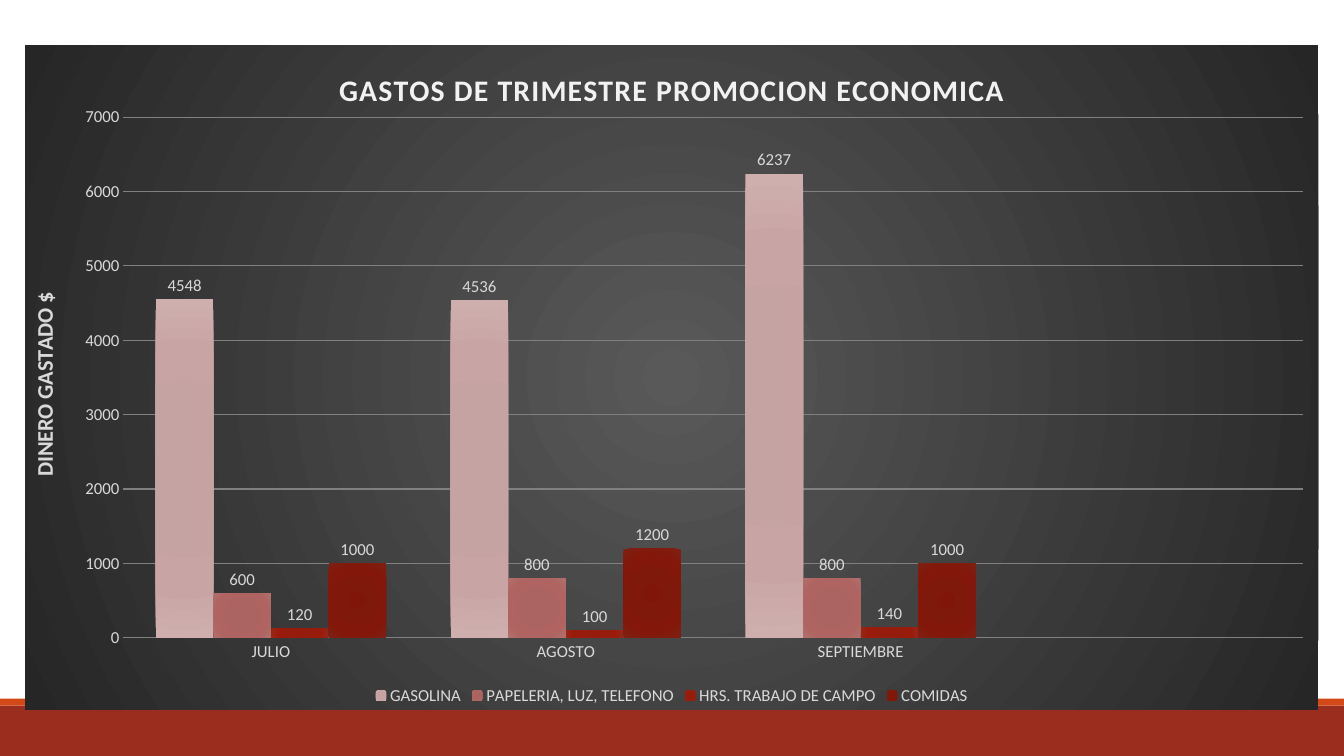
from dataclasses import dataclass

import pptx
import pptx.chart.data
import pptx.dml.color
import pptx.enum.chart
import pptx.enum.shapes
import pptx.oxml
import pptx.oxml.ns
import pptx.util

Pt = pptx.util.Pt


@dataclass(frozen=True)
class Theme:
    face: str = "Calibri"
    brick: str = "9B2D1F"
    orange: str = "D34817"
    grid: str = "808080"
    text: str = "D9D9D9"
    title: str = "F2F2F2"
    body: float = 12
    axis: float = 16
    head: float = 21.28
    panel: tuple = ((0, "595959"), (100, "262626"))


THEME = Theme()
MONTHS = ("JULIO", "AGOSTO", "SEPTIEMBRE", "")
STOPS = (0, 34, 70, 100)
COSTS = (
    ("GASOLINA", (4548, 4536, 6237, None),
     ("C3A1A0", "C4A3A2", "C8A5A4", "CEAFAE")),
    ("PAPELERIA, LUZ, TELEFONO", (600, 800, 800, None),
     ("AB625E", "AB6461", "AF6461", "B16F6C")),
    ("HRS. TRABAJO DE CAMPO", (120, 100, 140, None),
     ("971B0B", "961D0E", "9B1B0B", "972617")),
    ("COMIDAS", (1000, 1200, 1000, None),
     ("801609", "7F190C", "831709", "7F2014")),
)


def rgb(code):
    return pptx.dml.color.RGBColor.from_string(code)


def style(font, size, color=THEME.text, bold=False):
    font.name = THEME.face
    font.size = Pt(size)
    font.bold = bold
    font.color.rgb = rgb(color)


def band(slide, top, height, color):
    """Add a full-width strip."""
    shape = slide.shapes.add_shape(
        pptx.enum.shapes.MSO_SHAPE.RECTANGLE, 0, Pt(top), Pt(960), Pt(height))
    shape.shadow.inherit = False
    shape.fill.solid()
    shape.fill.fore_color.rgb = rgb(color)
    shape.line.fill.background()


def radial(stops, focus):
    """Return shape properties with a circular gradient around focus."""
    marks = "".join(
        f'<a:gs pos="{pos * 1000}"><a:srgbClr val="{color}"/></a:gs>'
        for pos, color in stops)
    rect = " ".join(f'{side}="{pct * 1000}"' for side, pct in zip("ltrb", focus))
    return pptx.oxml.parse_xml(
        f'<c:spPr {pptx.oxml.ns.nsdecls("c", "a")}><a:gradFill>'
        f'<a:gsLst>{marks}</a:gsLst><a:path path="circle">'
        f'<a:fillToRect {rect}/></a:path></a:gradFill>'
        '<a:ln><a:noFill/></a:ln></c:spPr>')


def place(chart, x, y, w, h):
    """Fix the inner plot area as fractions of the chart."""
    area = chart._chartSpace.chart.plotArea
    for old in area.findall(pptx.oxml.ns.qn("c:layout")):
        area.remove(old)
    sizes = "".join(f'<c:{key} val="{val}"/>'
                    for key, val in zip("xywh", (x, y, w, h)))
    area.insert(0, pptx.oxml.parse_xml(
        f'<c:layout {pptx.oxml.ns.nsdecls("c")}><c:manualLayout>'
        '<c:layoutTarget val="inner"/><c:xMode val="edge"/>'
        f'<c:yMode val="edge"/>{sizes}</c:manualLayout></c:layout>'))


def caption(owner, text, size, color, gap=0):
    """Title a chart or axis, with letter spacing in points."""
    para = owner.text_frame.paragraphs[0]
    para.text = text
    run = para.runs[0]
    style(run.font, size, color, True)
    if gap:
        run.font._element.set("spc", str(gap * 100))


def axes(chart):
    none = pptx.enum.chart.XL_TICK_MARK.NONE
    value = chart.value_axis
    for axis in (chart.category_axis, value):
        axis.major_tick_mark = axis.minor_tick_mark = none
        axis.format.line.fill.background()
        style(axis.tick_labels.font, THEME.body)
    value.minimum_scale, value.maximum_scale = 0, 7000
    value.major_unit = 1000
    value.has_major_gridlines = True
    line = value.major_gridlines.format.line
    line.width = Pt(0.75)
    line.color.rgb = rgb(THEME.grid)
    caption(value.axis_title, "DINERO GASTADO $", THEME.axis, THEME.text)


def bars(plot):
    plot.gap_width = 112
    plot.overlap = 0
    plot.vary_by_categories = False
    for series, (_, _, colors) in zip(plot.series, COSTS):
        old = series._element.get_or_add_spPr()
        fill = radial(zip(STOPS, colors), (100,) * 4)
        series._element.replace(old, fill)
        series.invert_if_negative = False
        labels = series.data_labels
        labels.show_value = True
        labels.position = pptx.enum.chart.XL_LABEL_POSITION.OUTSIDE_END
        style(labels.font, THEME.body)


def legend(chart):
    chart.has_legend = True
    chart.legend.position = pptx.enum.chart.XL_LEGEND_POSITION.BOTTOM
    chart.legend.include_in_layout = True
    style(chart.legend.font, THEME.body)


def graph(slide):
    data = pptx.chart.data.CategoryChartData()
    data.categories = MONTHS
    for name, values, _ in COSTS:
        data.add_series(name, values)
    chart = slide.shapes.add_chart(
        pptx.enum.chart.XL_CHART_TYPE.COLUMN_CLUSTERED,
        Pt(18), Pt(32.4), Pt(923.8), Pt(474.5), data).chart
    style(chart.font, THEME.body)
    chart.has_title = True
    caption(chart.chart_title, "GASTOS DE TRIMESTRE PROMOCION ECONOMICA",
            THEME.head, THEME.title, 1)
    chart.chart_title.include_in_layout = False
    axes(chart)
    bars(chart.plots[0])
    legend(chart)
    place(chart, 0.076, 0.108, 0.912, 0.784)
    chart._chartSpace.chart.addnext(radial(THEME.panel, (50,) * 4))


def main():
    deck = pptx.Presentation()
    deck.slide_width, deck.slide_height = Pt(960), Pt(540)
    slide = deck.slides.add_slide(deck.slide_layouts[6])
    band(slide, 504, 36, THEME.brick)
    band(slide, 499, 5, THEME.orange)
    graph(slide)
    deck.save("out.pptx")


if __name__ == "__main__":
    main()
